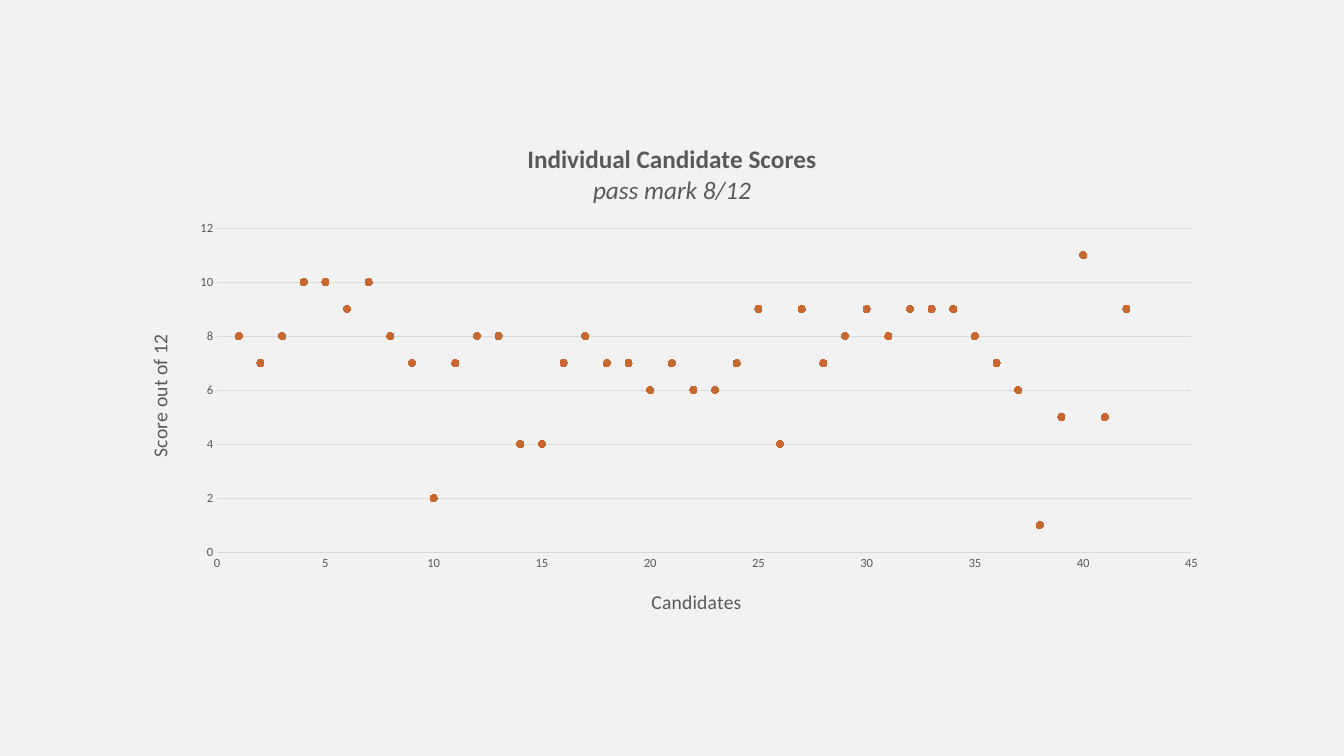
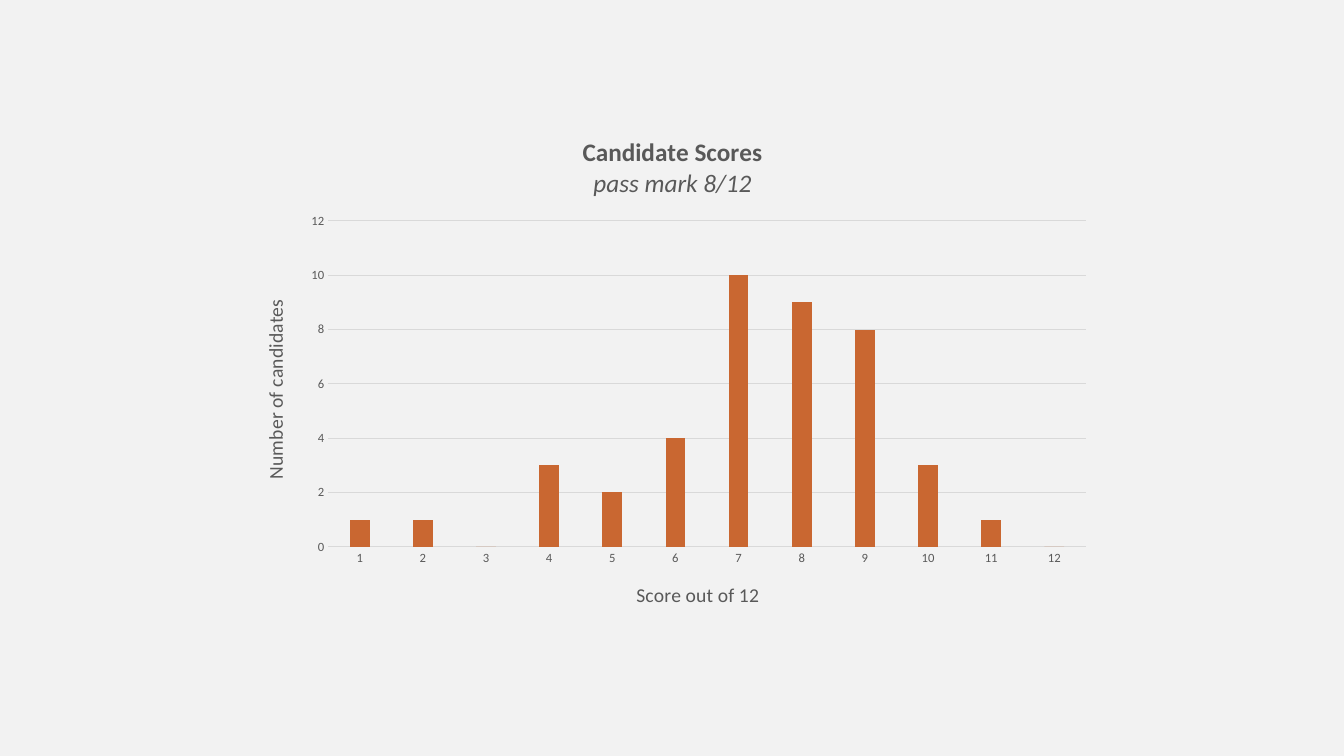
from dataclasses import dataclass

from lxml.etree import SubElement
from pptx import Presentation
from pptx.chart.data import CategoryChartData, XyChartData
from pptx.dml.color import RGBColor
from pptx.enum.chart import XL_CHART_TYPE, XL_MARKER_STYLE, XL_TICK_MARK
from pptx.oxml import parse_xml
from pptx.oxml.ns import nsdecls, qn
from pptx.util import Inches, Pt

# Shared look
FONT = "Calibri"
PAPER, INK, GRID, RUST = "F2F2F2", "595959", "D9D9D9", "C96731"
WIDE, HIGH = 13.33, 7.5


@dataclass
class Plot:
    """One chart slide; box in inches, area and foot as shares of the box."""
    title: str
    across: str
    up: str
    kind: XL_CHART_TYPE
    scores: list[int]
    box: tuple[float, float, float, float]
    area: tuple[float, float, float, float]
    foot: tuple[float, float]


PLOTS = [
    Plot("Individual Candidate Scores", "Candidates", "Score out of 12",
         XL_CHART_TYPE.XY_SCATTER,
         [8, 7, 8, 10, 10, 9, 10, 8, 7, 2, 7, 8, 8, 4, 4, 7, 8, 7, 7, 6, 7,
          6, 6, 7, 9, 4, 9, 7, 8, 9, 8, 9, 9, 9, 8, 7, 6, 1, 5, 11, 5, 9],
         (1.23, 1.23, 10.87, 5.04), (0.085, 0.205, 0.889, 0.638),
         (0.478, 0.906)),
    Plot("Candidate Scores", "Score out of 12", "Number of candidates",
         XL_CHART_TYPE.COLUMN_CLUSTERED,
         [1, 1, 0, 3, 2, 4, 10, 9, 8, 3, 1, 0],
         (2.39, 1.16, 8.56, 5.06), (0.101, 0.204, 0.878, 0.639),
         (0.454, 0.903)),
]


def color(code: str) -> RGBColor:
    return RGBColor.from_string(code)


def fill(part, code: str) -> None:
    part.solid()
    part.fore_color.rgb = color(code)


def style(font, size: float, bold: bool = False, slant: bool = False) -> None:
    font.name, font.size = FONT, Pt(size)
    font.bold, font.italic = bold, slant
    font.color.rgb = color(INK)


def stroke(line) -> None:
    line.color.rgb = color(GRID)
    line.width = Pt(0.75)


def place(node, spot: tuple, inner: bool = False) -> None:
    """Fix a chart part at shares of the chart's size."""
    for old in node.findall(qn("c:layout")):
        node.remove(old)
    frame = parse_xml(f"<c:layout {nsdecls('c')}/>")
    node.insert(1 if node.find(qn("c:tx")) is not None else 0, frame)
    rules = SubElement(frame, qn("c:manualLayout"))
    if inner:
        SubElement(rules, qn("c:layoutTarget")).set("val", "inner")
    for side in "xy":
        SubElement(rules, qn(f"c:{side}Mode")).set("val", "edge")
    for side, share in zip("xywh", spot):
        SubElement(rules, qn(f"c:{side}")).set("val", str(share))


def clear(chart) -> None:
    """Let the slide show through the chart and its plot area."""
    space = chart._chartSpace
    bare = f"<c:spPr {nsdecls('c', 'a')}><a:noFill/><a:ln><a:noFill/></a:ln></c:spPr>"
    space.find(qn("c:txPr")).addprevious(parse_xml(bare))
    space.chart.plotArea.append(parse_xml(bare))


def set_axis(axis, label: str) -> None:
    axis.major_tick_mark = axis.minor_tick_mark = XL_TICK_MARK.NONE
    style(axis.tick_labels.font, 9)
    frame = axis.axis_title.text_frame
    frame.text = label
    style(frame.paragraphs[0].runs[0].font, 14)


def get_data(plot: Plot):
    spots = range(1, len(plot.scores) + 1)
    if plot.kind == XL_CHART_TYPE.XY_SCATTER:
        data = XyChartData()
        row = data.add_series("Series 1")
        for spot, score in zip(spots, plot.scores):
            row.add_data_point(spot, score)
    else:
        data = CategoryChartData()
        data.categories = [str(spot) for spot in spots]
        data.add_series("Series 1", plot.scores)
    return data


def draw(slide, plot: Plot) -> None:
    box = [Inches(side) for side in plot.box]
    chart = slide.shapes.add_chart(plot.kind, *box, get_data(plot)).chart
    chart.has_legend = False
    chart.font.name, chart.font.size = FONT, Pt(10)

    # Title with the pass mark below
    frame = chart.chart_title.text_frame
    frame.text = f"{plot.title}\npass mark 8/12"
    head, sub = frame.paragraphs
    style(head.runs[0].font, 18, bold=True)
    style(sub.runs[0].font, 18, slant=True)

    # Axes
    flat, tall = chart.category_axis, chart.value_axis
    set_axis(flat, plot.across)
    set_axis(tall, plot.up)
    flat.has_major_gridlines = False
    stroke(flat.format.line)
    tall.format.line.fill.background()
    stroke(tall.major_gridlines.format.line)
    tall.minimum_scale, tall.maximum_scale, tall.major_unit = 0, 12, 2

    # Points or columns
    group = chart.plots[0]
    group.vary_by_categories = False
    row = group.series[0]
    if plot.kind == XL_CHART_TYPE.XY_SCATTER:
        flat.minimum_scale, flat.maximum_scale, flat.major_unit = 0, 45, 5
        row.format.line.fill.background()
        row.marker.style, row.marker.size = XL_MARKER_STYLE.CIRCLE, 5
        fill(row.marker.format.fill, RUST)
        row.marker.format.line.color.rgb = color(RUST)
    else:
        group.gap_width = 219
        fill(row.format.fill, RUST)

    # Layout
    place(chart._chartSpace.chart.plotArea, plot.area, inner=True)
    place(flat.axis_title._element, plot.foot)
    clear(chart)


def main() -> None:
    deck = Presentation()
    deck.slide_width, deck.slide_height = Inches(WIDE), Inches(HIGH)
    fill(deck.slide_master.background.fill, PAPER)
    for plot in PLOTS:
        draw(deck.slides.add_slide(deck.slide_layouts[6]), plot)
    deck.save("out.pptx")


if __name__ == "__main__":
    main()
